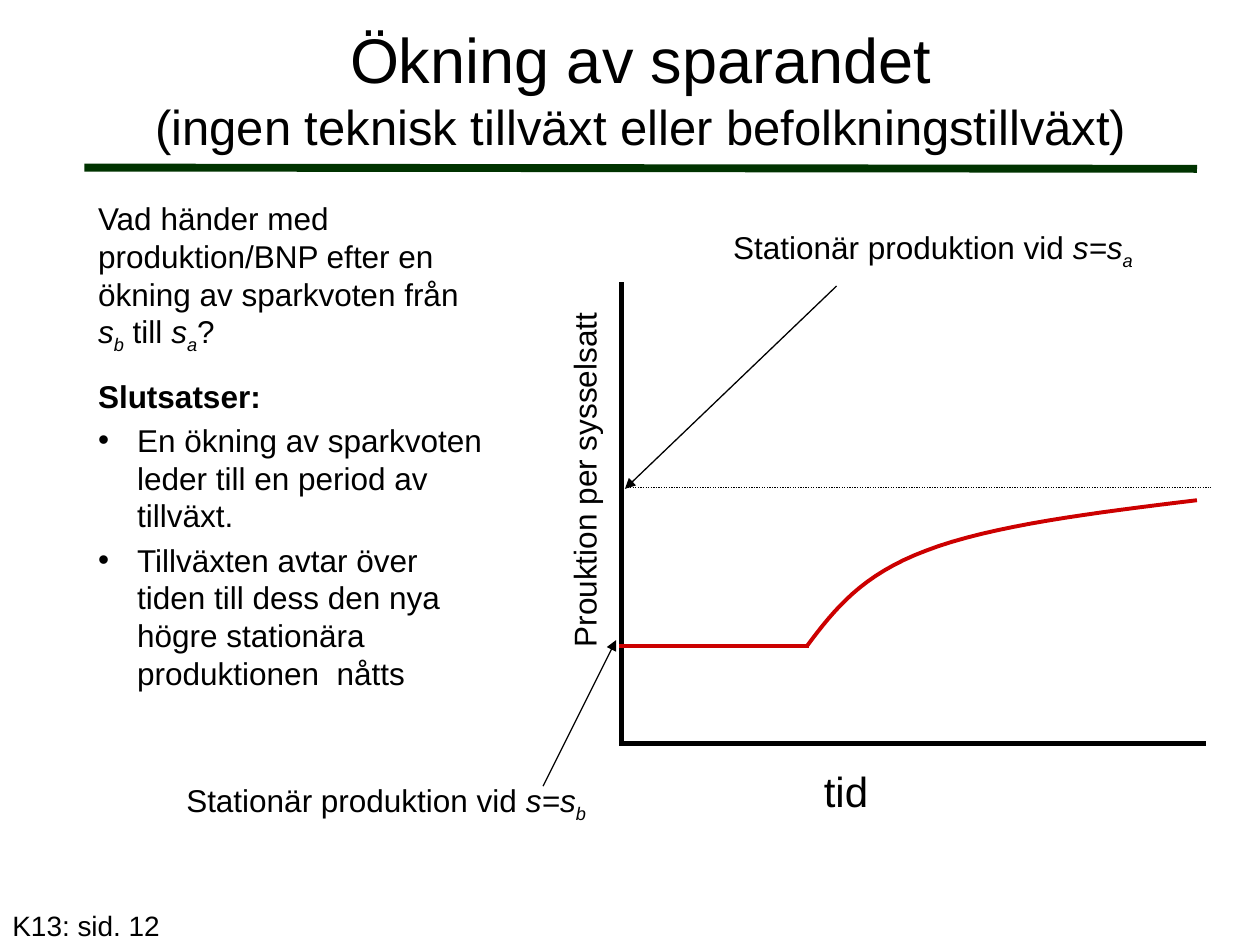
from dataclasses import dataclass
from lxml.etree import SubElement
from pptx import Presentation
from pptx.dml.color import RGBColor
from pptx.enum.dml import MSO_LINE
from pptx.enum.shapes import MSO_CONNECTOR
from pptx.enum.text import MSO_ANCHOR, MSO_AUTO_SIZE, PP_ALIGN
from pptx.oxml.ns import qn
from pptx.util import Inches, Pt


@dataclass(frozen=True)
class Theme:
    font: str = "Arial"
    text: RGBColor = RGBColor(0, 0, 0)
    rule: RGBColor = RGBColor(0, 0x33, 0)
    curve: RGBColor = RGBColor(0xCC, 0, 0)
    title: int = 36
    subtitle: int = 28
    axis: int = 24
    body: int = 18
    footer: int = 16


T = Theme()


def place(s, left, top, width, height):
    s.left, s.top, s.width, s.height = map(Inches, (left, top, width, height))


def add_run(p, text, size=T.body, bold=False, italic=False, sub=False):
    r = p.add_run()
    r.text = text
    f = r.font
    f.name, f.size, f.bold, f.italic = T.font, Pt(size), bold, italic
    f.color.rgb = T.text
    if sub:
        f._element.set("baseline", "-25000")


def add_symbol(p, name, index):
    add_run(p, name, italic=True)
    add_run(p, index, italic=True, sub=True)


def format_paragraph(p, space, bullet=False):
    p.space_before = p.space_after = Pt(space)
    if bullet:
        pPr = p._p.get_or_add_pPr()
        pPr.set("marL", str(Inches(0.31)))
        pPr.set("indent", str(-Inches(0.31)))
        SubElement(pPr, qn("a:buFont"), typeface=T.font)
        SubElement(pPr, qn("a:buChar"), char="•")


def add_box(slide, *box, rotation=0):
    s = slide.shapes.add_textbox(0, 0, 0, 0)
    place(s, *box)
    s.rotation = rotation
    s.text_frame.word_wrap = True
    return s.text_frame


def add_label(slide, text, *box, size=T.body, rotation=0, symbol=None):
    p = add_box(slide, *box, rotation=rotation).paragraphs[0]
    add_run(p, text, size)
    if symbol:
        add_symbol(p, *symbol)


def add_line(slide, start, end, color=T.text, width=0.75, arrow=False, dash=None):
    s = slide.shapes.add_connector(MSO_CONNECTOR.STRAIGHT, *map(Inches, start + end))
    s.line.color.rgb, s.line.width = color, Pt(width)
    if dash:
        s.line.dash_style = dash
    if arrow:
        SubElement(s.line._get_or_add_ln(), qn("a:tailEnd"), type="triangle")
    SubElement(s._element.spPr, qn("a:effectLst"))


def bezier(points, steps=16):
    for i in range(1, steps + 1):
        t = i / steps
        weights = ((1 - t) ** 3, 3 * t * (1 - t) ** 2, 3 * t ** 2 * (1 - t), t ** 3)
        yield tuple(Inches(sum(w * pt[axis] for w, pt in zip(weights, points))) for axis in (0, 1))


def add_curve(slide, *segments):
    builder = slide.shapes.build_freeform(*map(Inches, segments[0][0]))
    for segment in segments:
        builder.add_line_segments(list(bezier(segment)), close=False)
    s = builder.convert_to_shape()
    s.shadow.inherit = False
    s.fill.background()
    s.line.color.rgb, s.line.width = T.curve, Pt(2.25)


def add_title(slide):
    s = slide.shapes.title
    place(s, 0.67, 0.08, 8.83, 1.24)
    tf = s.text_frame
    tf.auto_size, tf.vertical_anchor = MSO_AUTO_SIZE.NONE, MSO_ANCHOR.MIDDLE
    p = tf.paragraphs[0]
    p.alignment = PP_ALIGN.CENTER
    add_run(p, "Ökning av sparandet", T.title)
    p.add_line_break()
    add_run(p, "(ingen teknisk tillväxt eller befolkningstillväxt)", T.subtitle)
    add_line(slide, (0.67, 1.33), (9.5, 1.34), T.rule, 4.5)


def add_question(slide):
    p = add_box(slide, 0.68, 1.53, 3.28, 1.01).paragraphs[0]
    format_paragraph(p, 3.5)
    add_run(p, "Vad händer med produktion/BNP efter en ökning av sparkvoten från ")
    add_symbol(p, "s", "b")
    add_run(p, " till ")
    add_symbol(p, "s", "a")
    add_run(p, "?")


def add_conclusions(slide):
    tf = add_box(slide, 0.68, 2.94, 3.32, 2.17)
    p = tf.paragraphs[0]
    format_paragraph(p, 1.8)
    add_run(p, "Slutsatser:", bold=True)
    for text in (
        "En ökning av sparkvoten leder till en period av tillväxt.",
        "Tillväxten avtar över tiden till dess den nya högre stationära produktionen  nåtts",
    ):
        p = tf.add_paragraph()
        format_paragraph(p, 1.8, bullet=True)
        add_run(p, text)


def add_diagram(slide):
    add_label(slide, "tid", 6.44, 6.03, 1.4, 0.5, size=T.axis)
    add_label(slide, "Stationär produktion vid ", 5.72, 1.76, 3.45, 0.4, symbol=("s=s", "a"))
    add_line(slide, (6.64, 2.27), (4.96, 3.88), arrow=True)
    add_label(slide, "Prouktion per sysselsatt", 3.06, 3.46, 3.15, 0.4, rotation=270)
    add_line(slide, (4.93, 2.24), (4.93, 5.92), width=3)
    add_line(slide, (4.93, 5.9), (9.57, 5.9), width=3)
    add_curve(
        slide,
        ((6.41, 5.12), (6.62, 4.84), (6.84, 4.56), (7.35, 4.37)),
        ((7.35, 4.37), (7.87, 4.17), (8.68, 4.07), (9.5, 3.97)),
    )
    add_line(slide, (6.42, 5.13), (4.91, 5.13), T.curve, 2.25)
    add_line(slide, (4.98, 3.87), (9.61, 3.87), dash=MSO_LINE.ROUND_DOT)
    add_label(slide, "Stationär produktion vid ", 1.38, 6.15, 3.51, 0.4, symbol=("s=s", "b"))
    add_line(slide, (4.31, 6.24), (4.89, 5.08), arrow=True)


def main():
    prs = Presentation()
    prs.slide_width, prs.slide_height = Inches(10), Inches(7.5)
    slide = prs.slides.add_slide(prs.slide_layouts[5])
    add_title(slide)
    add_question(slide)
    add_conclusions(slide)
    add_diagram(slide)
    add_label(slide, "K13: sid. 12", 0, 7.16, 2.08, 0.37, size=T.footer)
    prs.save("out.pptx")


if __name__ == "__main__":
    main()
